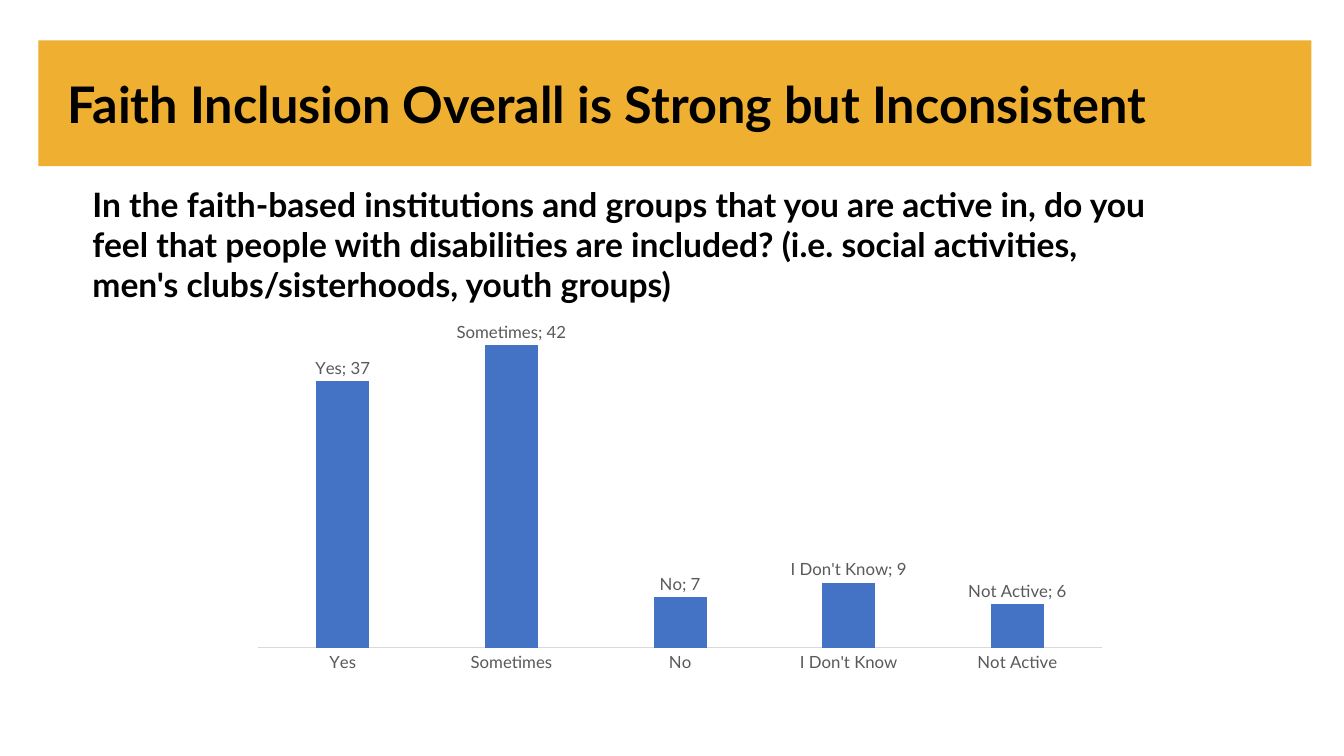
from lxml import etree
from pptx import Presentation
from pptx import util as u
from pptx.chart import data as chart_data
from pptx.dml.color import RGBColor
from pptx.enum import chart as ch, shapes, text
from pptx.oxml import ns

GOLD = RGBColor(0xEF, 0xAF, 0x30)
BLACK = RGBColor(0, 0, 0)
BLUE = RGBColor(0x44, 0x72, 0xC4)
GREY = RGBColor(0x59, 0x59, 0x59)
PALE_GREY = RGBColor(0xD9, 0xD9, 0xD9)

TITLE = "Faith Inclusion Overall is Strong but Inconsistent"
QUESTION = (
    "In the faith-based institutions and groups that you are active in, "
    "do you feel that people with disabilities are included? "
    "(i.e. social activities, men's clubs/sisterhoods, youth groups)"
)
ANSWERS = {"Yes": 37, "Sometimes": 42, "No": 7, "I Don't Know": 9, "Not Active": 6}


def add_child(parent, tag, value):
    return etree.SubElement(parent, ns.qn(tag), val=str(value))


class SurveySlide:
    font = "Lato"

    def __init__(self, deck):
        self.slide = deck.slides.add_slide(deck.slide_layouts[6])

    def style(self, font, size, color, bold=False):
        font.name = self.font
        font.size = u.Pt(size)
        font.bold = bold
        font.color.rgb = color

    def band(self, *box):
        band = self.slide.shapes.add_shape(
            shapes.MSO_SHAPE.RECTANGLE, *map(u.Cm, box))
        band.shadow.inherit = False
        band.fill.solid()
        band.fill.fore_color.rgb = GOLD
        band.line.fill.background()

    def heading(self, wording, size, *box, anchor=text.MSO_ANCHOR.TOP):
        frame = self.slide.shapes.add_textbox(*map(u.Cm, box)).text_frame
        frame.word_wrap = True
        frame.vertical_anchor = anchor
        frame.text = wording
        self.style(frame.paragraphs[0].runs[0].font, size, BLACK, bold=True)

    def column_chart(self, answers, top_value, plot_area, *box):
        """Draw one labelled column per answer; plot_area is x, y, w, h as shares of the chart."""
        survey = chart_data.CategoryChartData()
        survey.categories = list(answers)
        survey.add_series("Series 1", list(answers.values()))
        chart = self.slide.shapes.add_chart(
            ch.XL_CHART_TYPE.COLUMN_CLUSTERED, *map(u.Cm, box), survey).chart
        chart.has_legend = False
        chart.has_title = False
        self.style(chart.font, 12, GREY)

        answer_axis = chart.category_axis
        answer_axis.major_tick_mark = ch.XL_TICK_MARK.NONE
        answer_axis.format.line.color.rgb = PALE_GREY
        answer_axis.format.line.width = u.Pt(0.75)
        self.style(answer_axis.tick_labels.font, 12, GREY)

        count_axis = chart.value_axis
        count_axis.minimum_scale = 0
        count_axis.maximum_scale = top_value
        count_axis.has_major_gridlines = False
        count_axis.visible = False

        columns = chart.plots[0]
        columns.gap_width = 219
        columns.overlap = -27
        columns.vary_by_categories = False
        series = columns.series[0]
        series.format.fill.solid()
        series.format.fill.fore_color.rgb = BLUE
        self.label_columns(series.data_labels)
        self.place_plot(columns, plot_area)

    def label_columns(self, labels):
        labels.show_value = True
        labels.show_category_name = True
        labels.position = ch.XL_LABEL_POSITION.OUTSIDE_END
        self.style(labels.font, 12, GREY)
        separator = etree.Element(ns.qn("c:separator"))
        separator.text = "; "
        labels._element.find(ns.qn("c:showBubbleSize")).addnext(separator)

    def place_plot(self, columns, plot_area):
        area = columns._element.getparent()
        for automatic in area.findall(ns.qn("c:layout")):
            area.remove(automatic)
        layout = etree.Element(ns.qn("c:layout"))
        area.insert(0, layout)
        manual = etree.SubElement(layout, ns.qn("c:manualLayout"))
        add_child(manual, "c:layoutTarget", "inner")
        add_child(manual, "c:xMode", "edge")
        add_child(manual, "c:yMode", "edge")
        for side, share in zip("xywh", plot_area):
            add_child(manual, f"c:{side}", share)


def main():
    deck = Presentation()
    deck.slide_width = u.Cm(33.87)
    deck.slide_height = u.Cm(19.05)

    survey = SurveySlide(deck)
    survey.band(0.97, 1.02, 32.08, 3.17)
    survey.heading(TITLE, 36, 1.45, 1.02, 29.51, 3.17,
                   anchor=text.MSO_ANCHOR.MIDDLE)
    survey.heading(QUESTION, 24, 2.08, 4.5, 27.53, 3.33)
    survey.column_chart(ANSWERS, 45, (0.04, 0.03, 0.94, 0.78),
                        5.61, 7.85, 22.61, 10.46)

    deck.save("out.pptx")


if __name__ == "__main__":
    main()
